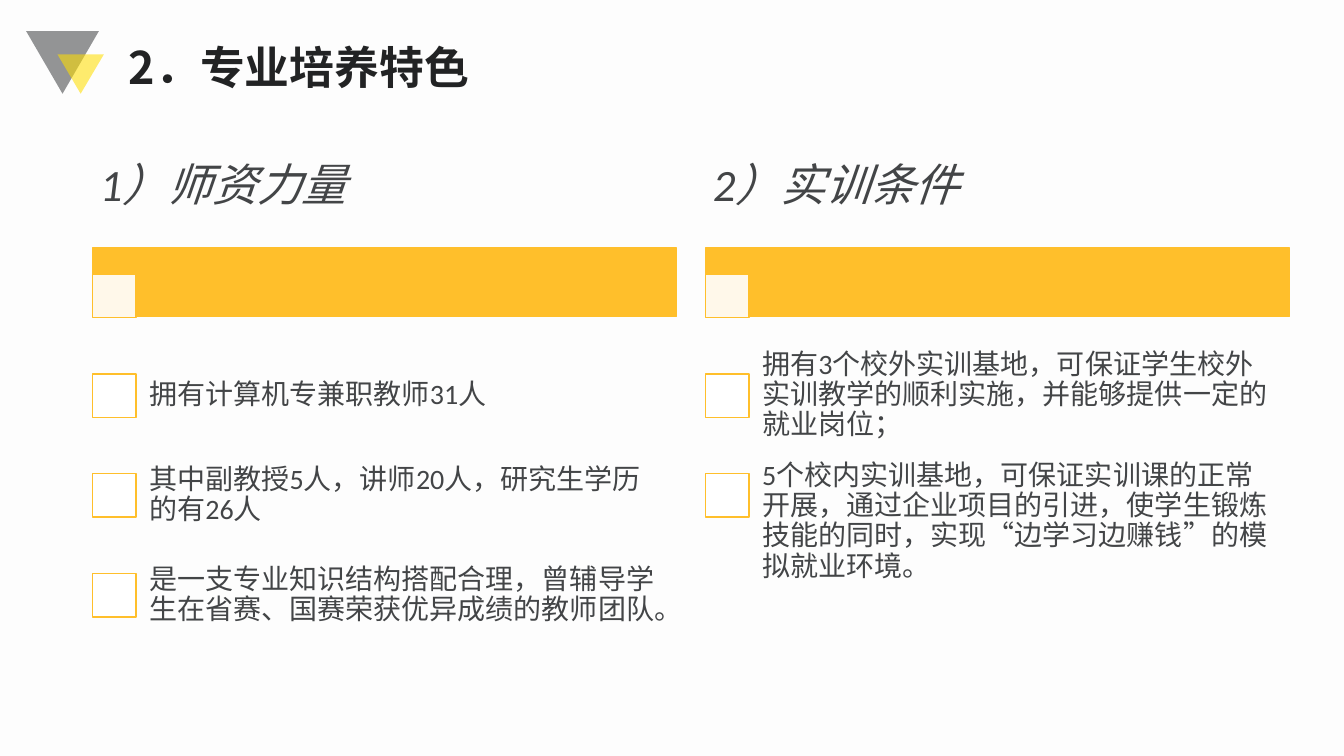
from dataclasses import dataclass

import pptx
import pptx.dml.color
import pptx.enum.shapes
import pptx.enum.text
import pptx.oxml
import pptx.oxml.ns
import pptx.util

SHAPE = pptx.enum.shapes.MSO_SHAPE
WIDE, HIGH = 13.33, 7.5
LEFT, PITCH = 0.92, 6.08
TOP, ROW = 3.43, 0.99
SPAN, BOX = 5.79, 0.43


@dataclass(frozen=True)
class Theme:
    back: str = "FDFDFD"
    ink: str = "434547"
    dark: str = "222324"
    gold: str = "FFBF2B"
    lemon: str = "FFDE01"
    white: str = "FFFFFF"
    latin: str = "Calibri"
    asian: str = "Noto Sans CJK SC"
    head: int = 32
    body: int = 20


@dataclass(frozen=True)
class Area:
    x: float
    y: float
    w: float
    h: float

    def emu(self) -> list[int]:
        return [pptx.util.Inches(n) for n in (self.x, self.y, self.w, self.h)]


@dataclass(frozen=True)
class Style:
    size: int
    color: str
    font: str
    bold: bool = False
    slant: bool = False
    side: float = 0.1
    edge: float = 0.05


@dataclass(frozen=True)
class Item:
    text: str
    drop: float = 0


@dataclass(frozen=True)
class Panel:
    title: str
    items: tuple[Item, ...]


THEME = Theme()
TITLE = Style(THEME.head, THEME.dark, THEME.asian, bold=True)
HEAD = Style(THEME.head, THEME.ink, THEME.latin, slant=True, side=0.07, edge=0.04)
BODY = Style(THEME.body, THEME.ink, THEME.latin, side=0.16, edge=0.16)

PANELS = (
    Panel("1）师资力量", (
        Item("拥有计算机专兼职教师31人"),
        Item("其中副教授5人，讲师20人，研究生学历的有26人"),
        Item("是一支专业知识结构搭配合理，曾辅导学生在省赛、国赛荣获优异成绩的教师团队。"),
    )),
    Panel("2）实训条件", (
        Item("拥有3个校外实训基地，可保证学生校外实训教学的顺利实施，并能够提供一定的就业岗位；"),
        Item("5个校内实训基地，可保证实训课的正常开展，通过企业项目的引进，"
             "使学生锻炼技能的同时，实现“边学习边赚钱”的模拟就业环境。", 0.26),
    )),
)


def rgb(code: str) -> pptx.dml.color.RGBColor:
    return pptx.dml.color.RGBColor.from_string(code)


def draw(slide, kind, area: Area, fill: str, line: str = "", alpha: int = 100):
    shape = slide.shapes.add_shape(kind, *area.emu())
    shape.shadow.inherit = False
    shape.fill.solid()
    shape.fill.fore_color.rgb = rgb(fill)
    if alpha < 100:
        tone = shape.fill._xPr.find(".//" + pptx.oxml.ns.qn("a:srgbClr"))
        pptx.oxml.ns.qn("a:alpha")
        tone.append(pptx.oxml.parse_xml(
            f'<a:alpha {pptx.oxml.ns.nsdecls("a")} val="{alpha * 1000}"/>'))
    if line:
        shape.line.color.rgb = rgb(line)
        shape.line.width = pptx.util.Pt(1)
    else:
        shape.line.fill.background()
    return shape


def write(slide, area: Area, text: str, style: Style) -> None:
    frame = slide.shapes.add_textbox(*area.emu()).text_frame
    frame.word_wrap = True
    frame.vertical_anchor = pptx.enum.text.MSO_ANCHOR.MIDDLE
    frame.margin_left = frame.margin_right = pptx.util.Inches(style.side)
    frame.margin_top = frame.margin_bottom = pptx.util.Inches(style.edge)
    frame.text = text
    para = frame.paragraphs[0]
    para.line_spacing = 0.9
    for run in para.runs:
        font = run.font
        font.size = pptx.util.Pt(style.size)
        font.name = style.font
        font.bold = style.bold
        font.italic = style.slant
        font.color.rgb = rgb(style.color)
        run._r.get_or_add_rPr().append(pptx.oxml.parse_xml(
            f'<a:ea {pptx.oxml.ns.nsdecls("a")} typeface="{THEME.asian}"/>'))


def panel(slide, col: int, data: Panel) -> None:
    x = LEFT + col * PITCH
    draw(slide, SHAPE.RECTANGLE, Area(x, 2.46, SPAN, 0.68), THEME.gold, THEME.gold)
    draw(slide, SHAPE.RECTANGLE, Area(x, 2.72, BOX, BOX), THEME.white, THEME.gold, 90)
    write(slide, Area(x, 1.24, SPAN, 1.22), data.title, HEAD)
    for row, item in enumerate(data.items):
        y = TOP + row * ROW
        mark = Area(x, y + (ROW - BOX) / 2, BOX, BOX)
        draw(slide, SHAPE.RECTANGLE, mark, THEME.white, THEME.gold)
        write(slide, Area(x + 0.4, y + item.drop, 5.38, ROW), item.text, BODY)


def main() -> None:
    deck = pptx.Presentation()
    deck.slide_width = pptx.util.Inches(WIDE)
    deck.slide_height = pptx.util.Inches(HIGH)
    slide = deck.slides.add_slide(deck.slide_layouts[6])
    slide.background.fill.solid()
    slide.background.fill.fore_color.rgb = rgb(THEME.back)
    for area, fill in (
        (Area(0.26, 0.31, 0.72, 0.62), THEME.ink),
        (Area(0.57, 0.54, 0.46, 0.39), THEME.lemon),
    ):
        draw(slide, SHAPE.ISOSCELES_TRIANGLE, area, fill, alpha=57).rotation = 180
    write(slide, Area(1.18, 0.26, 11.35, 0.87), "2．专业培养特色", TITLE)
    for col, data in enumerate(PANELS):
        panel(slide, col, data)
    deck.save("out.pptx")


if __name__ == "__main__":
    main()
